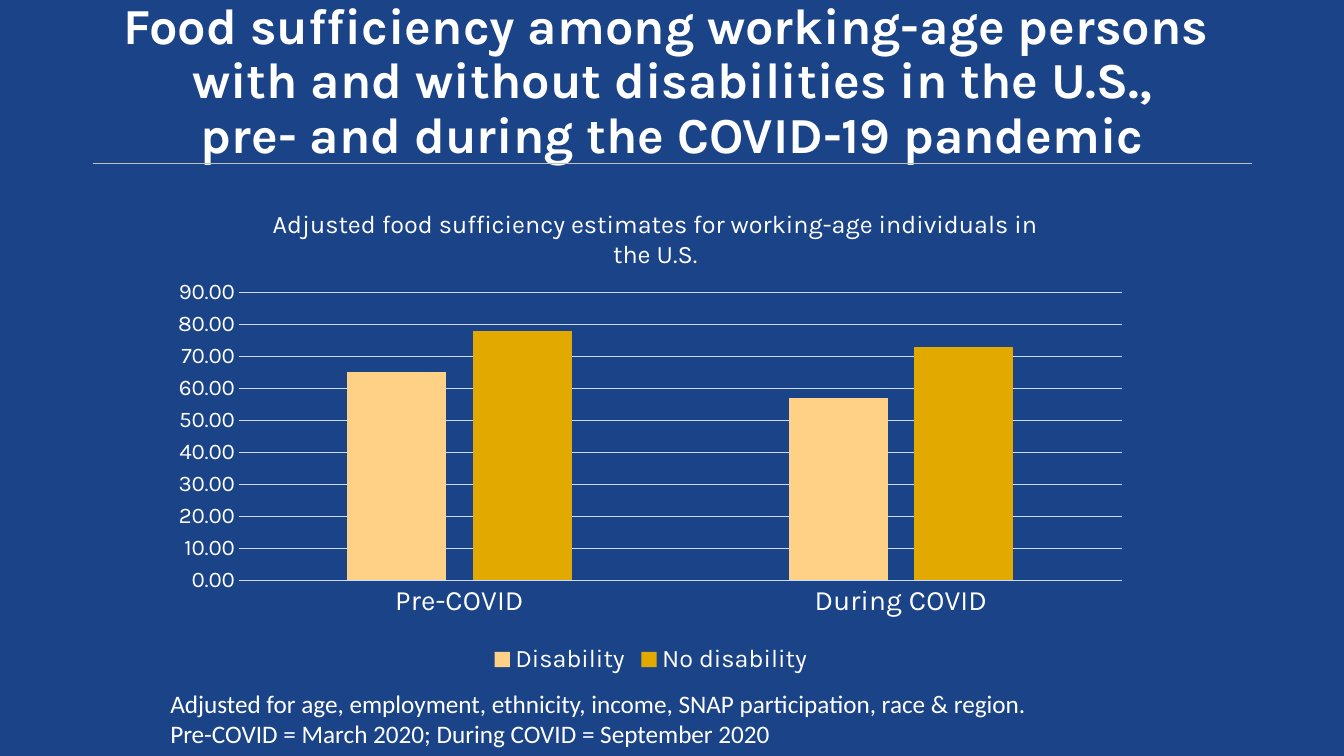
from dataclasses import dataclass

from lxml import etree
from pptx import Presentation
from pptx.chart.data import CategoryChartData
from pptx.dml.color import RGBColor
from pptx.enum.chart import XL_CHART_TYPE, XL_LEGEND_POSITION, XL_TICK_MARK
from pptx.enum.shapes import MSO_CONNECTOR
from pptx.enum.text import MSO_ANCHOR, PP_ALIGN
from pptx.oxml.ns import qn
from pptx.util import Inches, Pt

COLUMN = XL_CHART_TYPE.COLUMN_CLUSTERED
LEGEND_BOTTOM = XL_LEGEND_POSITION.BOTTOM
NO_TICK = XL_TICK_MARK.NONE
STRAIGHT = MSO_CONNECTOR.STRAIGHT
BOTTOM = MSO_ANCHOR.BOTTOM
CENTER = PP_ALIGN.CENTER


@dataclass(frozen=True)
class Theme:
    background: str = "1B4388"
    text: str = "FFFFFF"
    rule: str = "BFBFBF"
    grid: str = "C9DCFF"
    series: tuple = ("FFD187", "E2AA00")
    heading_font: str = "Karla"
    note_font: str = "Calibri"
    title_size: int = 36
    category_size: int = 20
    body_size: int = 18
    value_size: int = 16


class SlideBuilder:
    """Draws styled elements on one slide."""

    def __init__(self, deck, theme):
        self.theme = theme
        self.page = deck.slides.add_slide(deck.slide_layouts[5])
        fill = self.page.background.fill
        fill.solid()
        fill.fore_color.rgb = RGBColor.from_string(theme.background)

    def style(self, font, size, name, bold=False):
        font.size = Pt(size)
        font.name = name
        font.bold = bold
        font.color.rgb = RGBColor.from_string(self.theme.text)

    def stroke(self, line, color, width):
        line.color.rgb = RGBColor.from_string(color)
        line.width = Pt(width)

    def place(self, element, **fractions):
        layout = element.find(qn("c:layout"))
        if layout is None:
            layout = etree.Element(qn("c:layout"))
            element.insert(0, layout)
        manual = etree.SubElement(layout, qn("c:manualLayout"))
        if "w" in fractions:
            etree.SubElement(manual, qn("c:layoutTarget")).set("val", "inner")
        for mode in ("xMode", "yMode"):
            etree.SubElement(manual, qn(f"c:{mode}")).set("val", "edge")
        for key, value in fractions.items():
            etree.SubElement(manual, qn(f"c:{key}")).set("val", str(value))

    def rule(self, left, top, right):
        line = self.page.shapes.add_connector(
            STRAIGHT, Inches(left), Inches(top), Inches(right), Inches(top))
        self.stroke(line.line, self.theme.rule, 1)
        etree.SubElement(line._element.spPr, qn("a:effectLst"))

    def title(self, text, left, top, width, height):
        box = self.page.shapes.title
        box.left, box.top = Inches(left), Inches(top)
        box.width, box.height = Inches(width), Inches(height)
        frame = box.text_frame
        frame.text = text
        frame.word_wrap = True
        frame.vertical_anchor = BOTTOM
        para = frame.paragraphs[0]
        para.alignment = CENTER
        para.line_spacing = 0.9
        for span in para.runs:
            self.style(span.font, self.theme.title_size,
                       self.theme.heading_font, True)

    def note(self, text, left, top, width, height):
        box = self.page.shapes.add_textbox(
            Inches(left), Inches(top), Inches(width), Inches(height))
        frame = box.text_frame
        frame.text = text
        frame.word_wrap = True
        for para in frame.paragraphs:
            for span in para.runs:
                self.style(span.font, self.theme.body_size,
                           self.theme.note_font)

    def column_chart(self, heading, categories, series, left, top, width, height):
        theme = self.theme
        data = CategoryChartData(number_format="0.00")
        data.categories = categories
        for name, values in series.items():
            data.add_series(name, values)
        chart = self.page.shapes.add_chart(
            COLUMN, Inches(left), Inches(top), Inches(width), Inches(height),
            data).chart
        self.style(chart.font, theme.body_size, theme.heading_font)

        chart.has_title = True
        frame = chart.chart_title.text_frame
        frame.text = heading
        self.style(frame.paragraphs[0].runs[0].font, theme.body_size,
                   theme.heading_font)
        self.place(chart.chart_title._element, x=0.11, y=0.04)

        chart.has_legend = True
        chart.legend.position = LEGEND_BOTTOM
        chart.legend.include_in_layout = False
        self.style(chart.legend.font, theme.body_size, theme.heading_font)

        plot = chart.plots[0]
        plot.gap_width = 219
        plot.overlap = -27
        plot.vary_by_categories = False
        for bars, color in zip(plot.series, theme.series):
            bars.format.fill.solid()
            bars.format.fill.fore_color.rgb = RGBColor.from_string(color)
        self.place(chart._chartSpace.chart.plotArea,
                   x=0.08, y=0.22, w=0.9, h=0.58)

        for axis, size in ((chart.category_axis, theme.category_size),
                           (chart.value_axis, theme.value_size)):
            axis.major_tick_mark = axis.minor_tick_mark = NO_TICK
            self.style(axis.tick_labels.font, size, theme.heading_font)
        self.stroke(chart.category_axis.format.line, theme.grid, 0.75)
        values = chart.value_axis
        values.minimum_scale, values.maximum_scale = 0, 90
        values.major_unit = 10
        values.tick_labels.number_format = "0.00"
        values.tick_labels.number_format_is_linked = False
        values.format.line.fill.background()
        self.stroke(values.major_gridlines.format.line, theme.grid, 0.75)


def main():
    deck = Presentation()
    deck.slide_width, deck.slide_height = Inches(13.33), Inches(7.5)
    slide = SlideBuilder(deck, Theme())
    slide.rule(0.92, 1.62, 12.42)
    slide.title("Food sufficiency among working-age persons \v"
                "with and without disabilities in the U.S.,\v"
                "pre- and during the COVID-19 pandemic",
                0.92, 0.72, 11.5, 0.96)
    slide.column_chart(
        "Adjusted food sufficiency estimates for working-age individuals in the U.S.",
        ("Pre-COVID", "During COVID"),
        {"Disability": (65, 57), "No disability": (78, 73)},
        1.59, 1.82, 9.73, 4.92)
    slide.note("Adjusted for age, employment, ethnicity, income, "
               "SNAP participation, race & region.\n"
               "Pre-COVID = March 2020; During COVID = September 2020",
               1.59, 6.78, 9.59, 0.71)
    deck.save("out.pptx")


if __name__ == "__main__":
    main()
